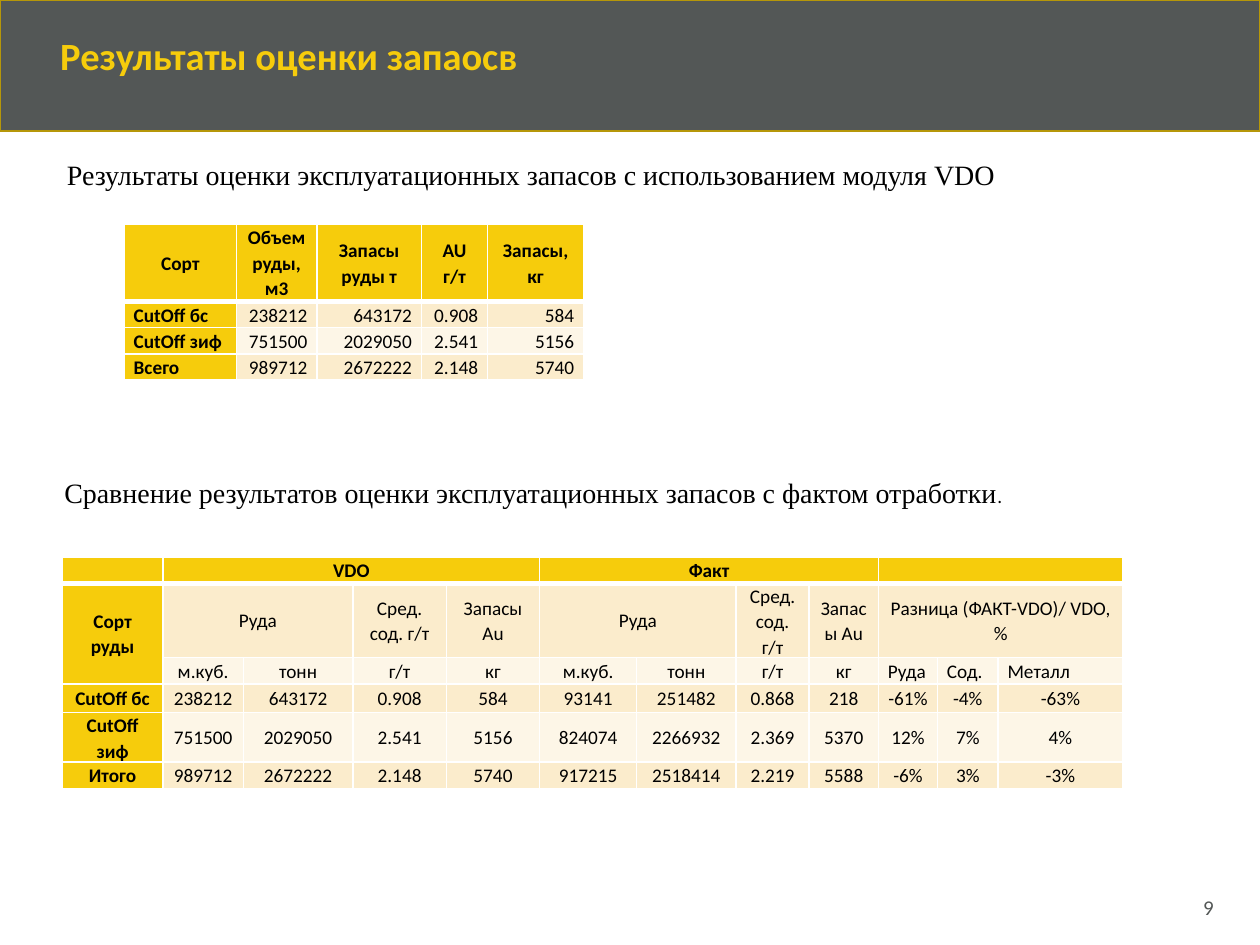
from dataclasses import dataclass
from typing import Callable

from lxml.etree import SubElement
from pptx import Presentation
from pptx.dml.color import RGBColor
from pptx.enum.shapes import MSO_SHAPE
from pptx.enum.text import MSO_ANCHOR, PP_ALIGN
from pptx.oxml.ns import qn
from pptx.util import Pt

COLORS = {
    "band": "535756",
    "band_line": "B69709",
    "accent": "F6CC0C",
    "odd_row": "FBECCC",
    "even_row": "FDF6E7",
    "text": "000000",
    "border": "FFFFFF",
}
CELL_SIZE = 11


@dataclass
class Grid:
    left: float
    top: float
    columns: list[float]
    heights: list[float]
    rows: list[list[str]]
    align: Callable[[int, int], PP_ALIGN]
    body_anchor: MSO_ANCHOR
    header_rows: int = 1
    merges: tuple = ()  # (first row, first column, last row, last column)


@dataclass
class Caption:
    left: float
    top: float
    width: float
    text: str
    ending: str = ""


def color(name: str) -> RGBColor:
    return RGBColor.from_string(COLORS[name])


def add_span(para, text: str, *, size: float, fill: str = "text",
             font: str = "Calibri", bold: bool = False) -> None:
    span = para.add_run()
    span.text = text
    span.font.size = Pt(size)
    span.font.name = font
    span.font.bold = bold
    span.font.color.rgb = color(fill)


def add_box(page, left: float, top: float, width: float, height: float):
    box = page.shapes.add_textbox(Pt(left), Pt(top), Pt(width), Pt(height))
    box.text_frame.word_wrap = True
    return box


def add_band(page) -> None:
    band = page.shapes.add_shape(MSO_SHAPE.RECTANGLE, 0, 0, Pt(720), Pt(75))
    band.shadow.inherit = False
    band.fill.solid()
    band.fill.fore_color.rgb = color("band")
    band.line.color.rgb = color("band_line")
    band.line.width = Pt(1)
    page.shapes.element.insert(2, band.element)  # behind the title


def add_caption(page, caption: Caption) -> None:
    box = add_box(page, caption.left, caption.top, caption.width, 48)
    para = box.text_frame.paragraphs[0]
    add_span(para, caption.text, size=16, font="Times New Roman")
    if caption.ending:
        add_span(para, caption.ending, size=11)


def set_borders(cell, row: int) -> None:
    widths = {"a:lnL": 1, "a:lnR": 1, "a:lnT": 3 if row == 1 else 1,
              "a:lnB": 3 if row == 0 else 1}
    properties = cell._tc.get_or_add_tcPr()
    for tag, width in widths.items():
        line = SubElement(properties, qn(tag), w=str(Pt(width)))
        solid = SubElement(line, qn("a:solidFill"))
        SubElement(solid, qn("a:srgbClr"), val=COLORS["border"])


def format_cell(cell, grid: Grid, row: int, column: int) -> None:
    set_borders(cell, row)
    heading = row == 0 or column == 0
    stripe = "odd_row" if row % 2 else "even_row"
    cell.fill.solid()
    cell.fill.fore_color.rgb = color("accent" if heading else stripe)
    cell.margin_left = cell.margin_right = Pt(5.4)
    cell.margin_top = cell.margin_bottom = 0
    cell.vertical_anchor = (MSO_ANCHOR.MIDDLE if row < grid.header_rows
                            else grid.body_anchor)
    para = cell.text_frame.paragraphs[0]
    para.alignment = grid.align(row, column)
    para.line_spacing = 1.07
    para.space_after = Pt(8)
    text = grid.rows[row][column]
    if text:
        add_span(para, text, size=CELL_SIZE, bold=heading)
    else:
        # An empty cell must not stretch its row
        SubElement(para._p, qn("a:endParaRPr"), sz=str(CELL_SIZE * 100))


def add_grid(page, grid: Grid) -> None:
    table = page.shapes.add_table(
        len(grid.rows), len(grid.columns), Pt(grid.left), Pt(grid.top),
        Pt(sum(grid.columns)), Pt(sum(grid.heights))).table
    table.horz_banding = False
    for column, width in zip(table.columns, grid.columns):
        column.width = Pt(width)
    for row, height in zip(table.rows, grid.heights):
        row.height = Pt(height)
    for first_row, first_column, last_row, last_column in grid.merges:
        table.cell(first_row, first_column).merge(
            table.cell(last_row, last_column))
    for row in range(len(grid.rows)):
        for column in range(len(grid.columns)):
            format_cell(table.cell(row, column), grid, row, column)


def align_reserves(row: int, column: int) -> PP_ALIGN:
    if row == 0:
        return PP_ALIGN.CENTER
    return PP_ALIGN.LEFT if column == 0 else PP_ALIGN.RIGHT


def align_comparison(row: int, column: int) -> PP_ALIGN:
    return PP_ALIGN.LEFT if row == 2 and column >= 9 else PP_ALIGN.CENTER


RESERVES = Grid(
    left=71, top=128.2,
    columns=[64.1, 46, 59.8, 37.8, 54.9],
    heights=[44, 15, 15, 15],
    rows=[
        ["Сорт", "Объем руды, м3", "Запасы руды т", "AU г/т", "Запасы, кг"],
        ["CutOff бс", "238212", "643172", "0.908", "584"],
        ["CutOff зиф", "751500", "2029050", "2.541", "5156"],
        ["Всего", "989712", "2672222", "2.148", "5740"],
    ],
    align=align_reserves, body_anchor=MSO_ANCHOR.BOTTOM)

COMPARISON = Grid(
    left=35.6, top=318.4,
    columns=[57.5, 46, 62.6, 53.4, 53.4, 55.4, 56.8, 41.8, 39.6, 33.8, 34.6, 71.3],
    heights=[15, 30.2, 15, 16.5, 15, 15],
    rows=[
        ["", "VDO", "", "", "", "Факт", "", "", "", "", "", ""],
        ["Сорт руды", "Руда", "", "Сред. сод. г/т", "Запасы Au", "Руда", "",
         "Сред. сод. г/т", "Запасы Au", "Разница (ФАКТ-VDO)/ VDO, %", "", ""],
        ["", *["м.куб.", "тонн", "г/т", "кг"] * 2, "Руда", "Сод.", "Металл"],
        ["CutOff бс", "238212", "643172", "0.908", "584", "93141", "251482",
         "0.868", "218", "-61%", "-4%", "-63%"],
        ["CutOff зиф", "751500", "2029050", "2.541", "5156", "824074",
         "2266932", "2.369", "5370", "12%", "7%", "4%"],
        ["Итого", "989712", "2672222", "2.148", "5740", "917215", "2518414",
         "2.219", "5588", "-6%", "3%", "-3%"],
    ],
    align=align_comparison, body_anchor=MSO_ANCHOR.MIDDLE, header_rows=3,
    merges=((0, 1, 0, 4), (0, 5, 0, 8), (0, 9, 0, 11), (1, 0, 2, 0),
            (1, 1, 1, 2), (1, 5, 1, 6), (1, 9, 1, 11)))

CAPTIONS = [
    Caption(31.2, 86.2, 554.4, "Результаты оценки эксплуатационных запасов "
            "с использованием модуля VDO"),
    Caption(29.7, 268.2, 566.6, "Сравнение результатов оценки "
            "эксплуатационных запасов с фактом отработки", "."),
]


def main() -> None:
    deck = Presentation()
    deck.slide_width, deck.slide_height = Pt(720), Pt(540)
    page = deck.slides.add_slide(deck.slide_layouts[5])

    # Header band and title
    add_band(page)
    title = page.shapes.title
    title.left, title.top, title.width, title.height = map(Pt, (27.2, 14.8, 279.4, 33.8))
    title.text_frame.word_wrap = False
    title.text_frame.vertical_anchor = MSO_ANCHOR.TOP
    para = title.text_frame.paragraphs[0]
    para.alignment = PP_ALIGN.LEFT
    add_span(para, "Результаты оценки запаосв", size=22, fill="accent", bold=True)

    # Captions and tables
    for caption, grid in zip(CAPTIONS, (RESERVES, COMPARISON)):
        add_caption(page, caption)
        add_grid(page, grid)

    # Page number
    para = add_box(page, 669.6, 507.6, 31, 23).text_frame.paragraphs[0]
    para.alignment = PP_ALIGN.RIGHT
    add_span(para, "9", size=12, fill="band")

    deck.save("out.pptx")


if __name__ == "__main__":
    main()
